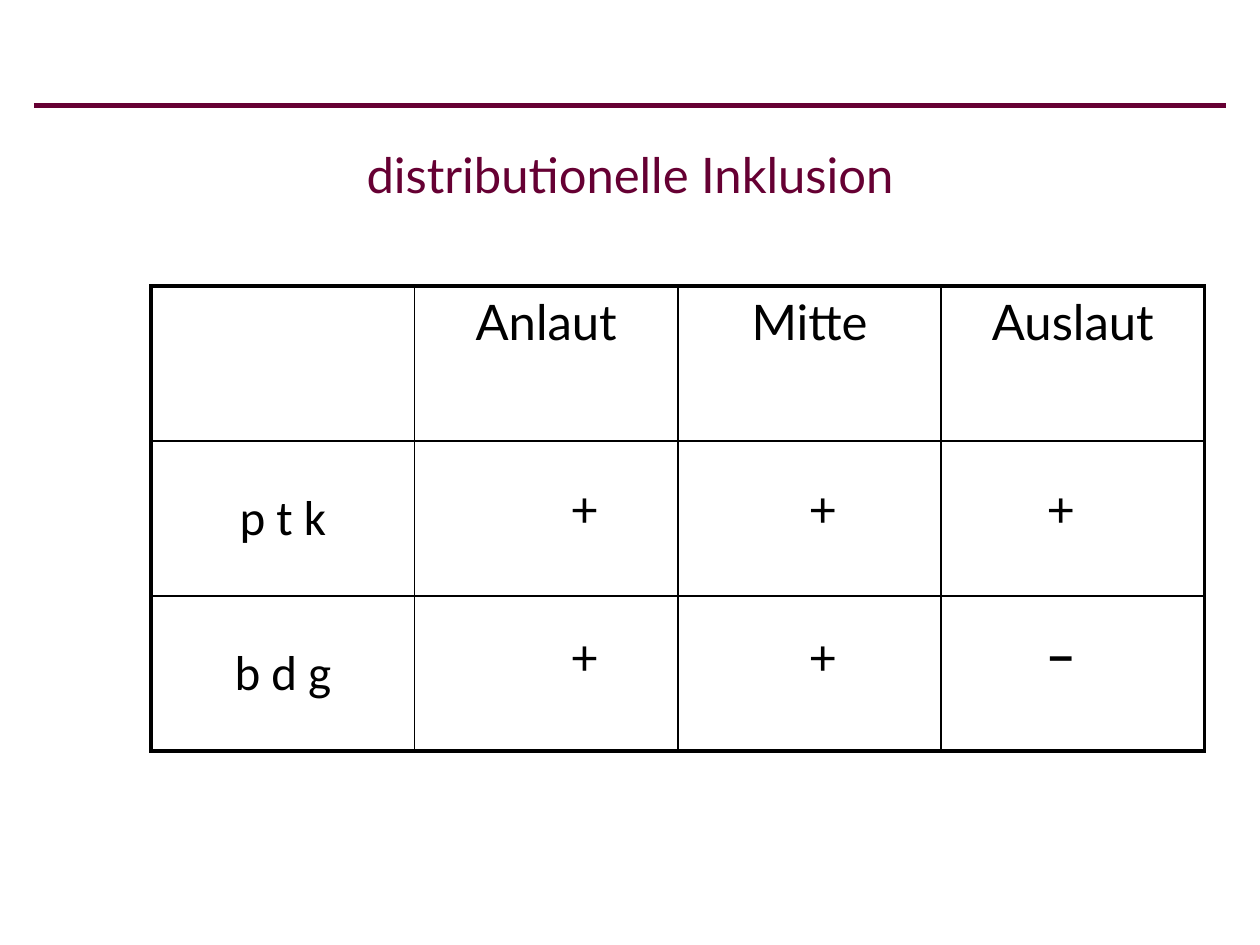
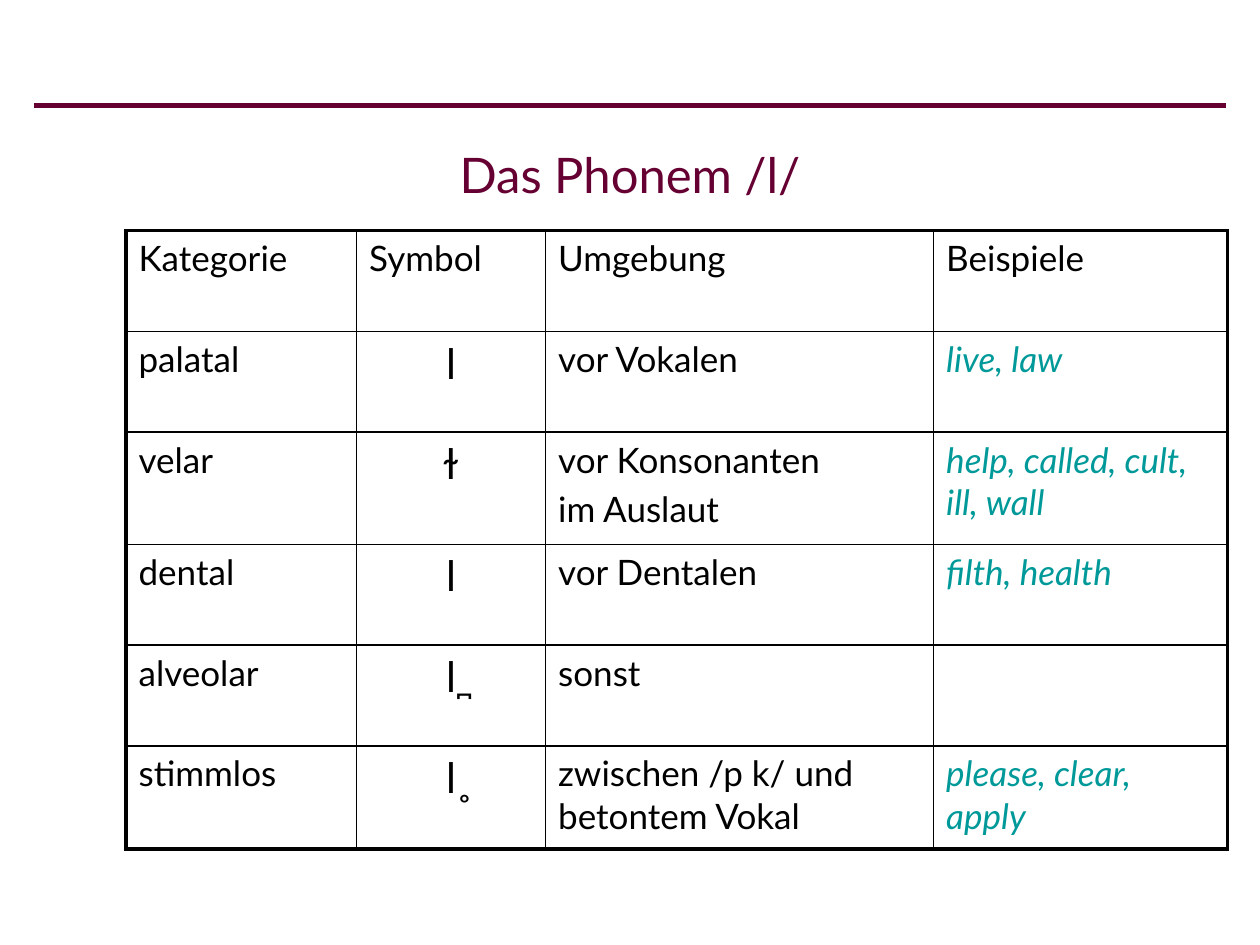
from lxml import etree
from pptx import Presentation
from pptx.dml.color import RGBColor
from pptx.enum.shapes import MSO_CONNECTOR
from pptx.enum.text import MSO_ANCHOR, MSO_AUTO_SIZE, PP_ALIGN
from pptx.oxml.ns import qn
from pptx.util import Inches, Pt

PLUM = RGBColor(0x66, 0x00, 0x33)
TEAL = RGBColor(0x00, 0x99, 0x99)
BLACK = RGBColor(0x00, 0x00, 0x00)
FONT = "Lato"
OUTER, INNER = Pt(2.25), Pt(1)

prs = Presentation()
prs.slide_width, prs.slide_height = Inches(10), Inches(7.5)
MARGIN, RULE_Y = Inches(0.27), Inches(0.84)
CONTENT_W = prs.slide_width - 2 * MARGIN


def add_titled_slide(title):
    s = prs.slides.add_slide(prs.slide_layouts[6])
    rule = s.shapes.add_connector(MSO_CONNECTOR.STRAIGHT, MARGIN, RULE_Y,
                                  MARGIN + CONTENT_W, RULE_Y)
    rule.line.color.rgb = PLUM
    rule.line.width = Pt(3)
    etree.SubElement(rule._element.spPr, qn("a:effectLst"))
    tf = s.shapes.add_textbox(MARGIN, RULE_Y, CONTENT_W, Inches(1.08)).text_frame
    tf.word_wrap = True
    tf.vertical_anchor = MSO_ANCHOR.MIDDLE
    p = tf.paragraphs[0]
    p.text = title
    p.alignment = PP_ALIGN.CENTER
    p.font.name, p.font.size, p.font.color.rgb = FONT, Pt(28), PLUM
    return s


def add_ruled_table(s, left, top, widths, heights, rows, size):
    """Add an unfilled table with a heavy frame and thin inner lines."""
    table = s.shapes.add_table(len(heights), len(widths), Inches(left), Inches(top),
                               Inches(sum(widths)), Inches(sum(heights))).table
    table.first_row = table.horz_banding = False
    for column, width in zip(table.columns, widths):
        column.width = Inches(width)
    for row, height in zip(table.rows, heights):
        row.height = Inches(height)
    last_row, last_col = len(heights) - 1, len(widths) - 1
    for r, texts in enumerate(rows):
        for c, text in enumerate(texts):
            cell = table.cell(r, c)
            cell.text = text
            cell.fill.background()
            for i, p in enumerate(cell.text_frame.paragraphs):
                p.font.name, p.font.size, p.font.color.rgb = FONT, size, BLACK
                if i:
                    p.space_before = int(size * 0.2)
            tc_pr = cell._tc.get_or_add_tcPr()
            edges = {"L": c == 0, "R": c == last_col, "T": r == 0, "B": r == last_row}
            for i, (side, is_outer) in enumerate(edges.items()):
                ln = etree.Element(qn(f"a:ln{side}"), w=str(OUTER if is_outer else INNER))
                fill = etree.SubElement(ln, qn("a:solidFill"))
                etree.SubElement(fill, qn("a:srgbClr"), val=str(BLACK))
                tc_pr.insert(i, ln)
    return table


# Distribution of the plosives
s = add_titled_slide("distributionelle Inklusion")
rows = [
    ["", "Anlaut", "Mitte", "Auslaut"],
    ["p t k", "", "", ""],
    ["b d g", "", "", ""],
]
table = add_ruled_table(s, 1.2, 2.27, [2.09] * 4, [1.23] * 3, rows, Pt(28))
for cell in table.iter_cells():
    cell.text_frame.paragraphs[0].alignment = PP_ALIGN.CENTER
for r in (1, 2):
    cell = table.cell(r, 0)
    cell.vertical_anchor = MSO_ANCHOR.MIDDLE
    cell.text_frame.paragraphs[0].font.name = "Calibri"

for r, marks in enumerate(["+++", "++−"]):
    for c, mark in enumerate(marks):
        tf = s.shapes.add_textbox(Inches(4.36 + 1.89 * c), Inches(3.75 + 1.17 * r),
                                  Inches(0.56), Inches(0.57)).text_frame
        tf.word_wrap = True
        tf.auto_size = MSO_AUTO_SIZE.SHAPE_TO_FIT_TEXT
        p = tf.paragraphs[0]
        p.text = mark
        p.alignment = PP_ALIGN.CENTER
        p.font.name, p.font.size, p.font.color.rgb = FONT, Pt(28), BLACK
        p.font.bold = mark == "−"

# Allophones of /l/
s = add_titled_slide("Das Phonem /l/")
rows = [
    ["Kategorie", "Symbol", "Umgebung", "Beispiele"],
    ["palatal", "l", "vor Vokalen", "live, law"],
    ["velar", "ɫ", "vor Konsonanten\nim Auslaut", "help, called, cult, ill, wall"],
    ["dental", "l", "vor Dentalen", "filth, health"],
    ["alveolar", "l̪", "sonst", ""],
    ["stimmlos", "l̥", "zwischen /p k/ und betontem Vokal", "please, clear, apply"],
]
table = add_ruled_table(s, 1, 1.83, [1.83, 1.5, 3.08, 2.33],
                        [0.8, 0.8, 0.89, 0.8, 0.8, 0.82], rows, Pt(20))
for r in range(1, len(rows)):
    symbol = table.cell(r, 1).text_frame.paragraphs[0]
    symbol.alignment = PP_ALIGN.CENTER
    symbol.font.size = Pt(24)
    example = table.cell(r, 3).text_frame.paragraphs[0]
    example.font.italic = True
    example.font.color.rgb = TEAL

prs.save("out.pptx")
